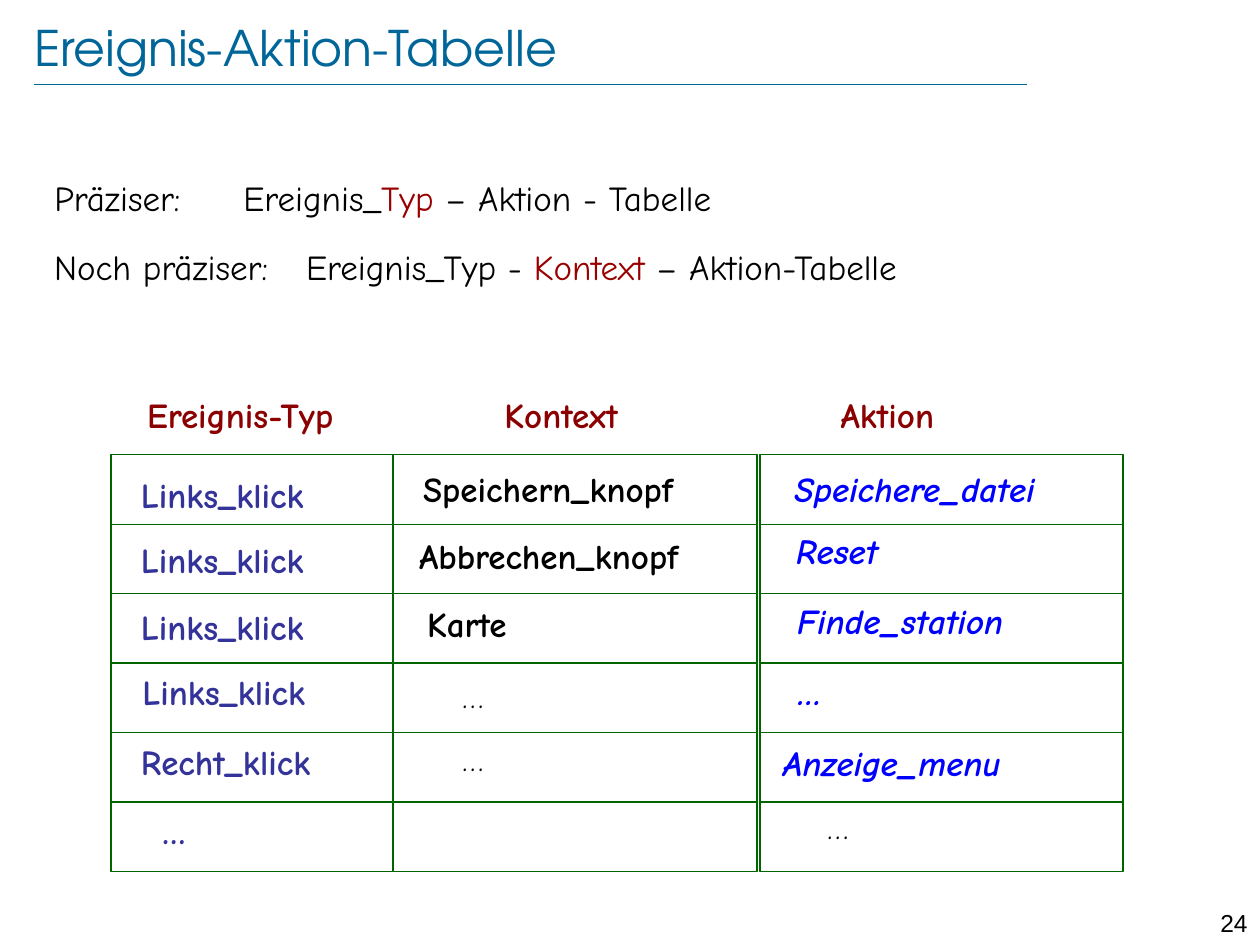
from lxml.etree import SubElement
from pptx import Presentation
from pptx.dml.color import RGBColor
from pptx.enum.shapes import MSO_CONNECTOR, MSO_SHAPE
from pptx.enum.text import MSO_ANCHOR, MSO_AUTO_SIZE, PP_ALIGN
from pptx.oxml.ns import qn
from pptx.util import Cm, Pt

TITLE_BLUE = RGBColor(0x00, 0x66, 0x99)
BLACK = RGBColor(0x00, 0x00, 0x00)
RED = RGBColor(0x99, 0x00, 0x00)
HEADER_RED = RGBColor(0x8B, 0x00, 0x00)
EVENT_BLUE = RGBColor(0x33, 0x33, 0x99)
ACTION_BLUE = RGBColor(0x00, 0x00, 0xFF)
GRID_GREEN = RGBColor(0x00, 0x64, 0x00)

GRID_TOP, ROW_HEIGHT = 9.17, 1.4
HEADER_TOP, LABEL_HEIGHT = 7.98, 0.95

# Cell left, cell width, label width, colour, italic,
# header (text, left, width), entries (text, left, top)
COLUMNS = [
    (2.24, 5.69, 4.8, EVENT_BLUE, False, ("Ereignis-Typ", 2.24, 5.21), [
        ("Links_klick", 2.59, 9.58),
        ("Links_klick", 2.59, 10.9),
        ("Links_klick", 2.59, 12.24),
        ("Links_klick", 2.62, 13.56),
        ("Recht_klick", 2.59, 14.96),
        ("…", 3.02, 16.36),
    ]),
    (7.92, 7.34, 6.17, BLACK, False, ("Kontext", 8.23, 6.17), [
        ("Speichern_knopf", 8.28, 9.47),
        ("Abbrechen_knopf", 8.2, 10.82),
        ("Karte", 8.36, 12.19),
        ("…", 9.07, 13.67),
        ("…", 9.07, 14.94),
        None,
    ]),
    (15.32, 7.32, 6.17, ACTION_BLUE, True, ("Aktion", 15.49, 4.8), [
        ("Speichere_datei", 15.77, 9.47),
        ("Reset", 15.8, 10.72),
        ("Finde_station", 15.82, 12.12),
        ("…", 15.82, 13.56),
        ("Anzeige_menu", 15.54, 14.99),
        ("…", 16.43, 16.31),
    ]),
]
# Open entries in a lighter style: (column, row)
PLAIN_ENTRIES = {(1, 3), (1, 4), (2, 5)}


class SlideBuilder:
    title_font = "TeX Gyre Adventor"
    text_font = "Comic Neue"
    number_font = "Arial"

    def __init__(self, slide):
        self.slide = slide

    def place(self, shape, left, top, width, height):
        shape.left, shape.top = Cm(left), Cm(top)
        shape.width, shape.height = Cm(width), Cm(height)

    def style(self, run, size, color, font=None, bold=False, italic=False):
        run.font.name = font or self.text_font
        run.font.size = Pt(size)
        run.font.color.rgb = color
        run.font.bold, run.font.italic = bold, italic

    def title(self, text):
        shape = self.slide.shapes.title
        self.place(shape, 0.69, 0.33, 23.01, 1.22)
        frame = shape.text_frame
        frame.text = text
        frame.auto_size = MSO_AUTO_SIZE.NONE
        frame.vertical_anchor = MSO_ANCHOR.MIDDLE
        frame.margin_left = frame.margin_right = 0
        frame.margin_top = frame.margin_bottom = 0
        paragraph = frame.paragraphs[0]
        paragraph.alignment = PP_ALIGN.LEFT
        self.style(paragraph.runs[0], 28, TITLE_BLUE, self.title_font)

    def rule(self, left, right, y):
        line = self.slide.shapes.add_connector(
            MSO_CONNECTOR.STRAIGHT, Cm(left), Cm(y), Cm(right), Cm(y))
        line.line.color.rgb = TITLE_BLUE
        line.line.width = Pt(0.25)
        SubElement(line._element.spPr, qn("a:effectLst"))

    def tabbed_line(self, shape, tab, parts, line_spacing):
        """Fill a shape with one unbulleted line of (text, colour) parts."""
        frame = shape.text_frame
        frame.word_wrap = True
        frame.auto_size = MSO_AUTO_SIZE.NONE
        paragraph = frame.paragraphs[0]
        properties = paragraph._p.get_or_add_pPr()
        properties.set("marL", "0")
        properties.set("indent", "0")
        SubElement(properties, qn("a:buNone"))
        tabs = SubElement(properties, qn("a:tabLst"))
        SubElement(tabs, qn("a:tab"), pos=str(Cm(tab)), algn="l")
        paragraph.space_before = Pt(0)
        paragraph.line_spacing = line_spacing
        for text, color in parts:
            run = paragraph.add_run()
            run.text = text
            self.style(run, 20, color)

    def body(self, left, top, width, height, tab, parts):
        shape = self.slide.placeholders[1]
        self.place(shape, left, top, width, height)
        self.tabbed_line(shape, tab, parts, 0.9)

    def text_box(self, left, top, width, height):
        return self.slide.shapes.add_textbox(Cm(left), Cm(top), Cm(width), Cm(height))

    def label(self, text, left, top, width, height=LABEL_HEIGHT, size=20,
              color=BLACK, alignment=PP_ALIGN.LEFT, line_spacing=0.8, **font):
        frame = self.text_box(left, top, width, height).text_frame
        frame.word_wrap = True
        frame.text = text
        paragraph = frame.paragraphs[0]
        paragraph.alignment = alignment
        paragraph.line_spacing = line_spacing
        self.style(paragraph.runs[0], size, color, **font)

    def cell(self, left, top, width):
        shape = self.slide.shapes.add_shape(
            MSO_SHAPE.RECTANGLE, Cm(left), Cm(top), Cm(width), Cm(ROW_HEIGHT))
        shape.shadow.inherit = False
        shape.fill.background()
        shape.line.color.rgb = GRID_GREEN
        shape.line.width = Pt(0.75)


def main():
    presentation = Presentation()
    presentation.slide_width, presentation.slide_height = Cm(25.4), Cm(19.05)
    builder = SlideBuilder(presentation.slides.add_slide(presentation.slide_layouts[1]))

    builder.title("Ereignis-Aktion-Tabelle")
    builder.rule(0.69, 20.7, 1.7)
    builder.body(0.84, 3.53, 18.29, 1.57, 5.15, [
        ("Präziser:\tEreignis_", BLACK), ("Typ ", RED), ("– Aktion - Tabelle", BLACK)])
    builder.tabbed_line(builder.text_box(0.84, 4.83, 23.39, 1.55), 4.8, [
        ("Noch präziser:\tEreignis_Typ - ", BLACK), ("Kontext ", RED),
        ("– Aktion-Tabelle", BLACK)], 1.0)

    for column, (left, width, label_width, color, italic, header, entries) in enumerate(COLUMNS):
        header_text, header_left, header_width = header
        builder.label(header_text, header_left, HEADER_TOP, header_width,
                      color=HEADER_RED, alignment=PP_ALIGN.CENTER, bold=True)
        for row, entry in enumerate(entries):
            builder.cell(left, GRID_TOP + row * ROW_HEIGHT, width)
            if entry is None:
                continue
            if (column, row) in PLAIN_ENTRIES:
                builder.label(*entry, label_width, size=18)
            else:
                builder.label(*entry, label_width, color=color, bold=True, italic=italic)

    builder.label("24", 24, 18.19, 1.4, 0.61, size=14, alignment=PP_ALIGN.RIGHT,
                  line_spacing=1.0, font=builder.number_font)
    presentation.save("out.pptx")


if __name__ == "__main__":
    main()
